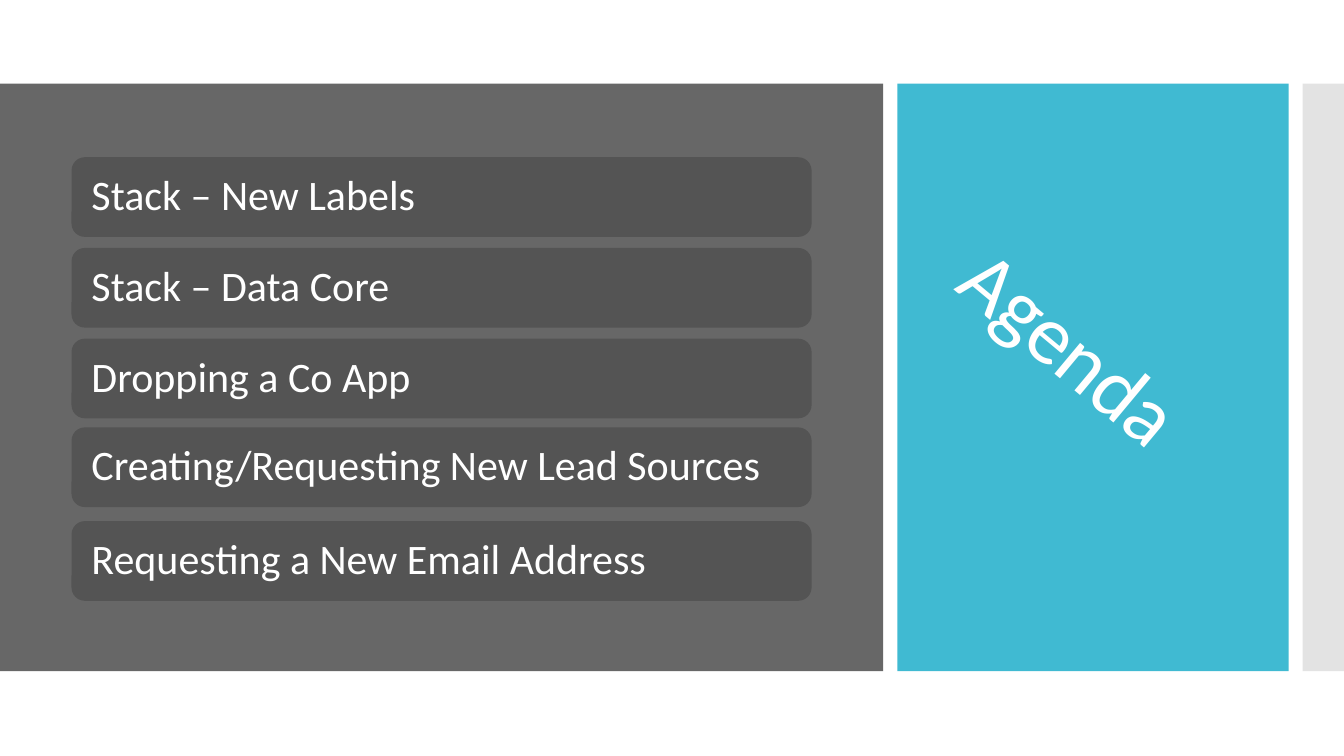
from dataclasses import dataclass
from pptx import Presentation
from pptx.dml.color import RGBColor
from pptx.enum.shapes import MSO_SHAPE
from pptx.enum.text import MSO_ANCHOR, PP_ALIGN
from pptx.util import Inches, Pt

RECT, ROUND = MSO_SHAPE.RECTANGLE, MSO_SHAPE.ROUNDED_RECTANGLE
MIDDLE, LEFT = MSO_ANCHOR.MIDDLE, PP_ALIGN.LEFT


@dataclass(frozen=True)
class Theme:
    """Colours, font and type sizes."""
    white: str = "FFFFFF"
    panel: str = "676767"
    bar: str = "545454"
    accent: str = "40BAD2"
    edge: str = "E3E3E3"
    font: str = "Calibri"
    title: int = 60
    item: int = 30


THEME = Theme()
TOP, TALL = 0.83, 5.83
ITEMS = [
    (0.73, "Stack – New Labels"),
    (1.63, "Stack – Data Core"),
    (2.53, "Dropping a Co App"),
    (3.41, "Creating/Requesting New Lead Sources"),
    (4.34, "Requesting a New Email Address"),
]


def add_block(slide, kind, box, fill):
    """Add a plain filled shape without line or shadow."""
    block = slide.shapes.add_shape(kind, *map(Inches, box))
    block.shadow.inherit = False
    block.fill.solid()
    block.fill.fore_color.rgb = RGBColor.from_string(fill)
    block.line.fill.background()
    return block


def set_text(shape, text, size, inset):
    """Write one left-aligned white line, centred in height."""
    frame = shape.text_frame
    frame.text = text
    frame.word_wrap = True
    frame.vertical_anchor = MIDDLE
    frame.margin_left = frame.margin_right = Inches(inset)
    para = frame.paragraphs[0]
    para.alignment = LEFT
    para.line_spacing = 0.9
    font = para.runs[0].font
    font.name, font.size = THEME.font, Pt(size)
    font.color.rgb = RGBColor.from_string(THEME.white)
    return para.runs[0]


def add_list(slide, box):
    """Draw the dark panel with its agenda bars."""
    left, top, wide, _ = box
    add_block(slide, RECT, box, THEME.panel)
    for drop, text in ITEMS:
        place = (left + 0.71, top + drop, wide - 1.42, 0.79)
        bar = add_block(slide, ROUND, place, THEME.bar)
        set_text(bar, text, THEME.item, 0.16)


def add_title(slide, box):
    """Draw the accent panel with its tilted title."""
    left, top, wide, _ = box
    add_block(slide, RECT, box, THEME.accent)
    place = (left + 0.28, top + 2.34, wide - 0.66, 0.92)
    title = slide.shapes.add_textbox(*map(Inches, place))
    title.rotation = 39.8
    run = set_text(title, "Agenda", THEME.title, 0.1)
    run.font._element.set("spc", "-60")


def main():
    """Build the agenda slide and save it."""
    deck = Presentation()
    deck.slide_width, deck.slide_height = Inches(13.33), Inches(7.5)
    slide = deck.slides.add_slide(deck.slide_layouts[6])
    fill = slide.background.fill
    fill.solid()
    fill.fore_color.rgb = RGBColor.from_string(THEME.white)
    add_list(slide, (0, TOP, 8.76, TALL))
    add_title(slide, (8.9, TOP, 3.88, TALL))
    add_block(slide, RECT, (12.92, TOP, 0.41, TALL), THEME.edge)
    deck.save("out.pptx")


if __name__ == "__main__":
    main()
